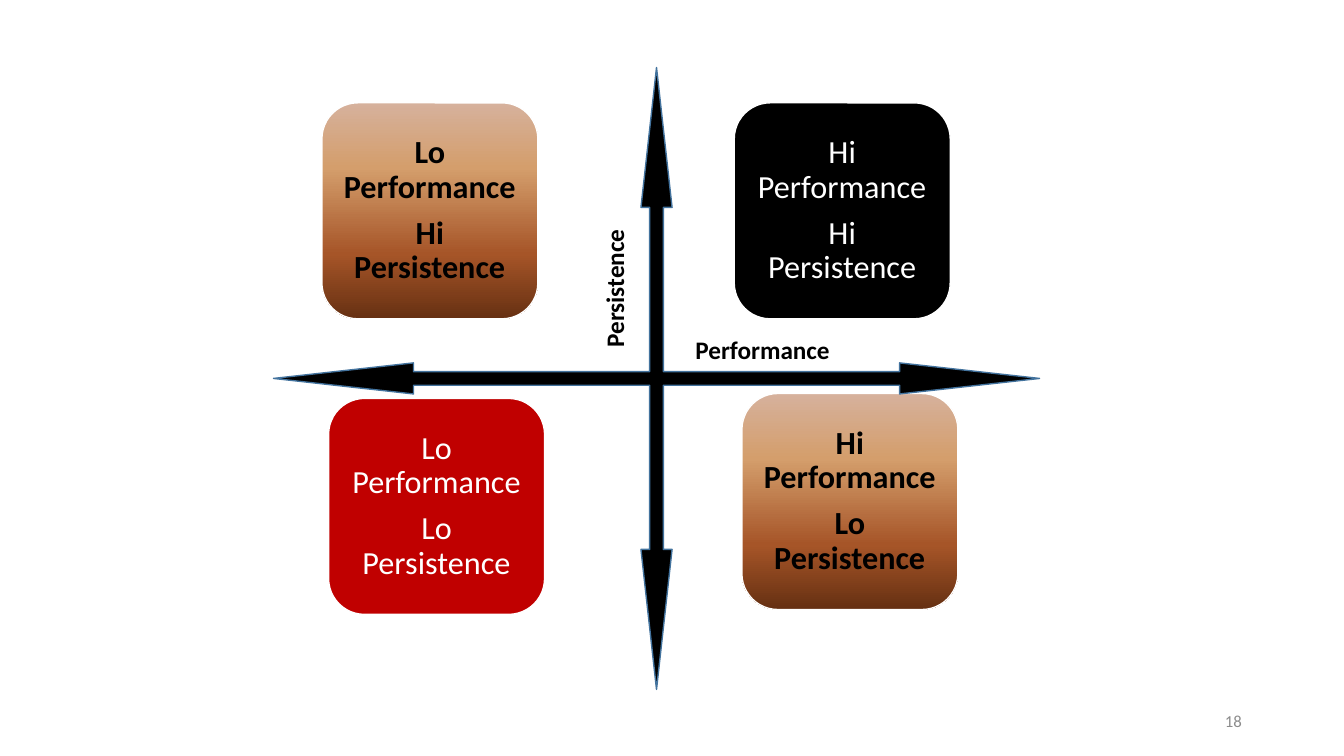
from copy import deepcopy

from pptx import Presentation
from pptx.dml.color import RGBColor
from pptx.enum.shapes import MSO_SHAPE
from pptx.enum.text import MSO_ANCHOR, PP_ALIGN
from pptx.oxml.ns import qn
from pptx.util import Inches, Pt

ROUND, RECT, CROSS = MSO_SHAPE.ROUNDED_RECTANGLE, MSO_SHAPE.RECTANGLE, MSO_SHAPE.QUAD_ARROW
LEFT, CENTER, RIGHT = PP_ALIGN.LEFT, PP_ALIGN.CENTER, PP_ALIGN.RIGHT
TOP, MIDDLE = MSO_ANCHOR.TOP, MSO_ANCHOR.MIDDLE

BLACK = RGBColor(0x00, 0x00, 0x00)
WHITE = RGBColor(0xFF, 0xFF, 0xFF)
RED = RGBColor(0xC0, 0x00, 0x00)
BLUE = RGBColor(0x43, 0x73, 0x9E)
GRAY = RGBColor(0x8C, 0x8C, 0x8C)
WOOD = [
    (0, RGBColor(0xD6, 0xB1, 0x9C)),
    (0.3, RGBColor(0xD4, 0x9E, 0x6C)),
    (0.7, RGBColor(0xA6, 0x55, 0x28)),
    (1, RGBColor(0x66, 0x30, 0x12)),
]


def write(frame, *lines, size=18, color=BLACK, bold=False, align=LEFT,
          anchor=TOP, space=None, after=None, inset=None):
    """Fill a text frame, one paragraph for each line."""
    frame.word_wrap = True
    frame.vertical_anchor = anchor
    if inset is not None:
        frame.margin_left = frame.margin_right = Inches(inset)
        frame.margin_top = frame.margin_bottom = Inches(inset)
    for i, line in enumerate(lines):
        para = frame.add_paragraph() if i else frame.paragraphs[0]
        para.alignment, para.line_spacing, para.space_after = align, space, after
        run = para.add_run()
        run.text = line
        font = run.font
        font.name, font.size, font.bold = "Calibri", Pt(size), bold
        font.color.rgb = color


class Board:
    """Style and current slide; lengths are percent of the slide's size."""

    def __init__(self, deck):
        self.wide, self.high = deck.slide_width, deck.slide_height
        self.slide = deck.slides.add_slide(deck.slide_layouts[6])

    def place(self, x, y, w, h):
        return [round(part * full / 100) for part, full in
                zip((x, y, w, h), (self.wide, self.high) * 2)]

    def shape(self, kind, area, fill, line=None):
        item = self.slide.shapes.add_shape(kind, *self.place(*area))
        item.shadow.inherit = False
        if isinstance(fill, list):
            self.blend(item, fill)
        else:
            item.fill.solid()
            item.fill.fore_color.rgb = fill
        if line is None:
            item.line.fill.background()
        else:
            item.line.color.rgb = line
            item.line.width = Pt(1)
        return item

    def blend(self, item, stops):
        item.fill.gradient()
        item.fill.gradient_angle = 270
        group = next(item._element.spPr.iter(qn("a:gsLst")))
        while len(group) < len(stops):
            group.append(deepcopy(group[0]))
        for stop, (spot, color) in zip(item.fill.gradient_stops, stops):
            stop.position = spot
            stop.color.rgb = color

    def tile(self, x, y, first, second, fill, color=WHITE, bold=False):
        item = self.shape(ROUND, (x, y, 16.07, 28.57), fill, WHITE)
        write(item.text_frame, f"{first} Performance", f"{second} Persistence",
              size=23, color=color, bold=bold, align=CENTER, anchor=MIDDLE,
              space=0.9, after=Pt(8), inset=0.09)

    def text(self, area, words, turn=None, **style):
        frame = self.slide.shapes.add_textbox(*self.place(*area)).text_frame
        write(frame, words, **style)
        if turn:
            frame._txBody.bodyPr.set("vert", turn)


def main():
    deck = Presentation()
    deck.slide_width, deck.slide_height = Inches(13.33), Inches(7.5)
    board = Board(deck)

    # Quadrants
    board.tile(23.95, 13.6, "Lo", "Hi", WOOD, BLACK, True)
    board.tile(54.63, 13.6, "Hi", "Hi", BLACK)
    board.tile(24.45, 52.7, "Lo", "Lo", RED)
    board.tile(55.2, 52.05, "Hi", "Lo", WOOD, BLACK, True)

    # Crossed axes
    cross = board.shape(CROSS, (20.35, 8.93, 57, 82.27), BLACK, BLUE)
    for i, share in enumerate((0.022, 0.025, 0.225)):
        cross.adjustments[i] = share

    # Axis names
    label = board.shape(RECT, (51, 43.6, 15.2, 5.33), WHITE)
    write(label.text_frame, "Performance", bold=True)
    board.text((44.2, 25.6, 3.75, 21.7), "Persistence", turn="vert270", bold=True)

    # Slide number
    board.text((70.65, 92.7, 22.5, 5.33), "18", size=12, color=GRAY,
               align=RIGHT, anchor=MIDDLE)

    deck.save("out.pptx")


if __name__ == "__main__":
    main()
